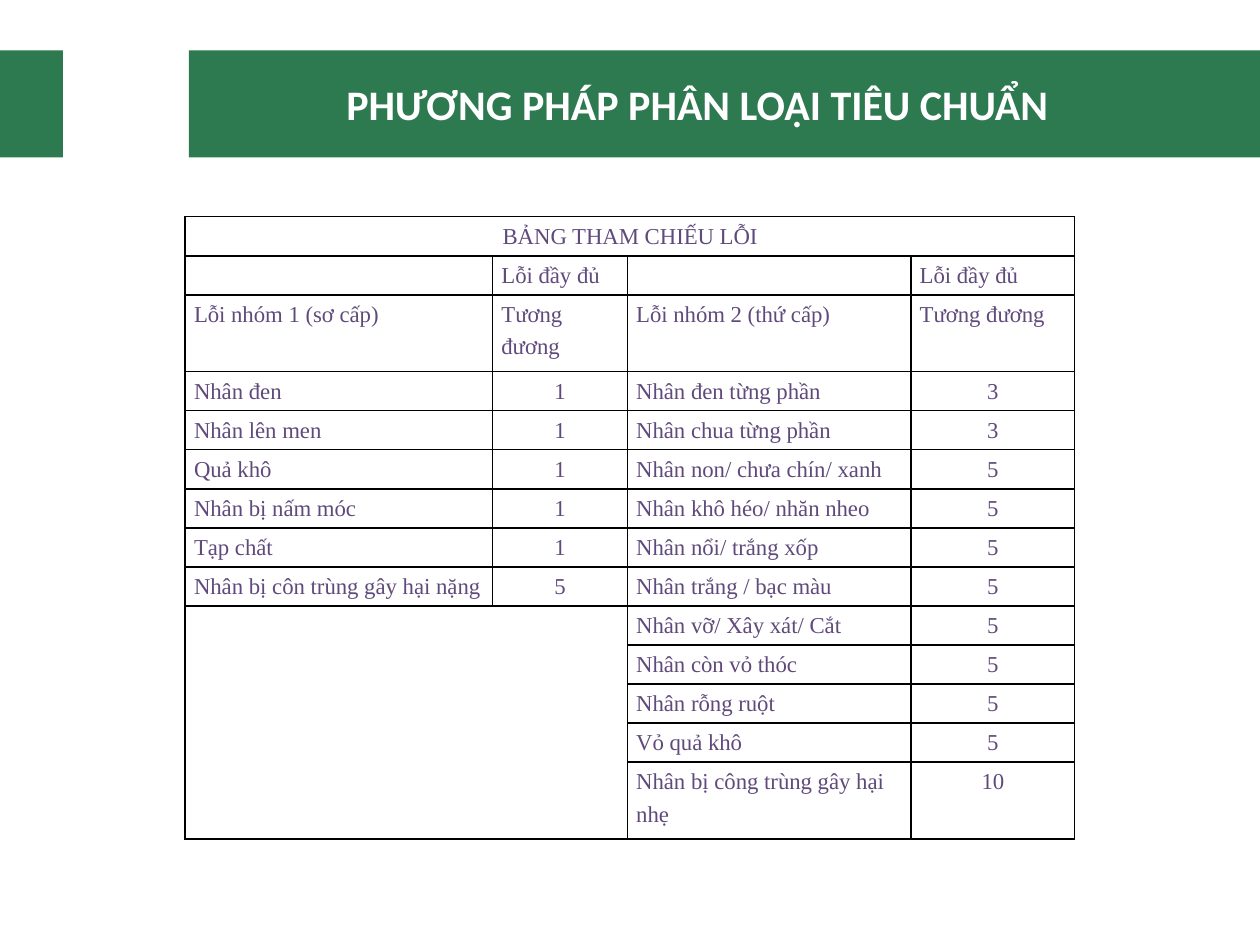
from lxml.etree import SubElement
from pptx import Presentation
from pptx.dml.color import RGBColor
from pptx.enum.shapes import MSO_SHAPE
from pptx.enum.text import MSO_ANCHOR, PP_ALIGN
from pptx.oxml import parse_xml
from pptx.oxml.ns import nsdecls, qn
from pptx.util import Inches, Pt

COLORS = {"green": "2D7950", "white": "FFFFFF", "purple": "604A7B", "black": "000000"}
TITLE_FONT = {"name": "Calibri", "size": Pt(24), "bold": True}
CELL_FONT = {"name": "Times New Roman", "size": Pt(13), "bold": False}
CELL_PARAGRAPH = {"line_spacing": 1.3, "space_before": Pt(3), "space_after": Pt(3)}
CELL_MARGINS = {
    "margin_left": Inches(0.07),
    "margin_right": Inches(0.07),
    "margin_top": 0,
    "margin_bottom": 0,
}
COL_WIDTHS = [2.44, 1.07, 2.25, 1.3]
ROW_HEIGHT, TALL_HEIGHT = 0.31, 0.61
TALL_ROWS = (2, 13)
ROWS = [
    ["BẢNG THAM CHIẾU LỖI", "", "", ""],
    ["", "Lỗi đầy đủ", "", "Lỗi đầy đủ"],
    ["Lỗi nhóm 1 (sơ cấp)", "Tương đương", "Lỗi nhóm 2 (thứ cấp)", "Tương đương"],
    ["Nhân đen", "1", "Nhân đen từng phần", "3"],
    ["Nhân lên men", "1", "Nhân chua từng phần", "3"],
    ["Quả khô", "1", "Nhân non/ chưa chín/ xanh", "5"],
    ["Nhân bị nấm móc", "1", "Nhân khô héo/ nhăn nheo", "5"],
    ["Tạp chất", "1", "Nhân nổi/ trắng xốp", "5"],
    ["Nhân bị côn trùng gây hại nặng", "5", "Nhân trắng / bạc màu", "5"],
    ["", "", "Nhân vỡ/ Xây xát/ Cắt", "5"],
    ["", "", "Nhân còn vỏ thóc", "5"],
    ["", "", "Nhân rỗng ruột", "5"],
    ["", "", "Vỏ quả khô", "5"],
    ["", "", "Nhân bị công trùng gây hại nhẹ", "10"],
]


def set_attrs(obj, values):
    for key, value in values.items():
        setattr(obj, key, value)


def rgb(name):
    return RGBColor.from_string(COLORS[name])


def add_run(p, text, font, color):
    r = p.add_run()
    r.text = text
    set_attrs(r.font, font)
    r.font.color.rgb = rgb(color)


def add_bar(s, left, width):
    sp = s.shapes.add_shape(
        MSO_SHAPE.RECTANGLE, Inches(left), Inches(0.4), Inches(width), Inches(0.85)
    )
    sp.shadow.inherit = False
    sp.fill.solid()
    sp.fill.fore_color.rgb = rgb("green")
    sp.line.fill.background()
    return sp


def add_title(s, text):
    sp = s.shapes.title
    set_attrs(sp, {"left": Inches(1.51), "top": Inches(0.4),
                   "width": Inches(7.8), "height": Inches(0.85)})
    tf = sp.text_frame
    set_attrs(tf, {"word_wrap": True, "vertical_anchor": MSO_ANCHOR.MIDDLE})
    p = tf.paragraphs[0]
    p.alignment = PP_ALIGN.CENTER
    p._p.get_or_add_pPr().set("indent", str(Inches(0.25)))
    add_run(p, text, TITLE_FONT, "white")
    return sp


def add_borders(cell):
    tc_pr = cell._tc.get_or_add_tcPr()
    for i, side in enumerate(("lnL", "lnR", "lnT", "lnB")):
        tc_pr.insert(i, parse_xml(
            f'<a:{side} {nsdecls("a")} w="{Pt(1)}"><a:solidFill>'
            f'<a:srgbClr val="{COLORS["black"]}"/></a:solidFill></a:{side}>'
        ))


def fill_cell(cell, text, centered):
    set_attrs(cell, CELL_MARGINS)
    cell.fill.solid()
    cell.fill.fore_color.rgb = rgb("white")
    add_borders(cell)
    p = cell.text_frame.paragraphs[0]
    if text:
        set_attrs(p, CELL_PARAGRAPH)
        p.alignment = PP_ALIGN.CENTER if centered else PP_ALIGN.LEFT
        add_run(p, text, CELL_FONT, "purple")
    else:
        SubElement(p._p, qn("a:endParaRPr")).set("sz", "1300")


def add_defect_table(s):
    heights = [TALL_HEIGHT if i in TALL_ROWS else ROW_HEIGHT for i in range(len(ROWS))]
    table = s.shapes.add_table(
        len(ROWS), len(COL_WIDTHS), Inches(1.47), Inches(1.72),
        Inches(sum(COL_WIDTHS)), Inches(sum(heights)),
    ).table
    set_attrs(table, {"first_row": False, "horz_banding": False})
    for col, width in zip(table.columns, COL_WIDTHS):
        col.width = Inches(width)
    for row, height in zip(table.rows, heights):
        row.height = Inches(height)
    for i, texts in enumerate(ROWS):
        for j, text in enumerate(texts):
            fill_cell(table.cell(i, j), text, i == 0 or text.isdigit())
    table.cell(0, 0).merge(table.cell(0, 3))
    table.cell(9, 0).merge(table.cell(13, 1))


def main():
    prs = Presentation()
    prs.slide_width, prs.slide_height = Inches(10), Inches(7.5)
    s = prs.slides.add_slide(prs.slide_layouts[5])
    title = add_title(s, "PHƯƠNG PHÁP PHÂN LOẠI TIÊU CHUẨN")
    title_bar = add_bar(s, 1.5, 8.5)
    title._element.addprevious(title_bar._element)
    add_bar(s, 0, 0.5)
    add_defect_table(s)
    prs.save("out.pptx")


if __name__ == "__main__":
    main()
